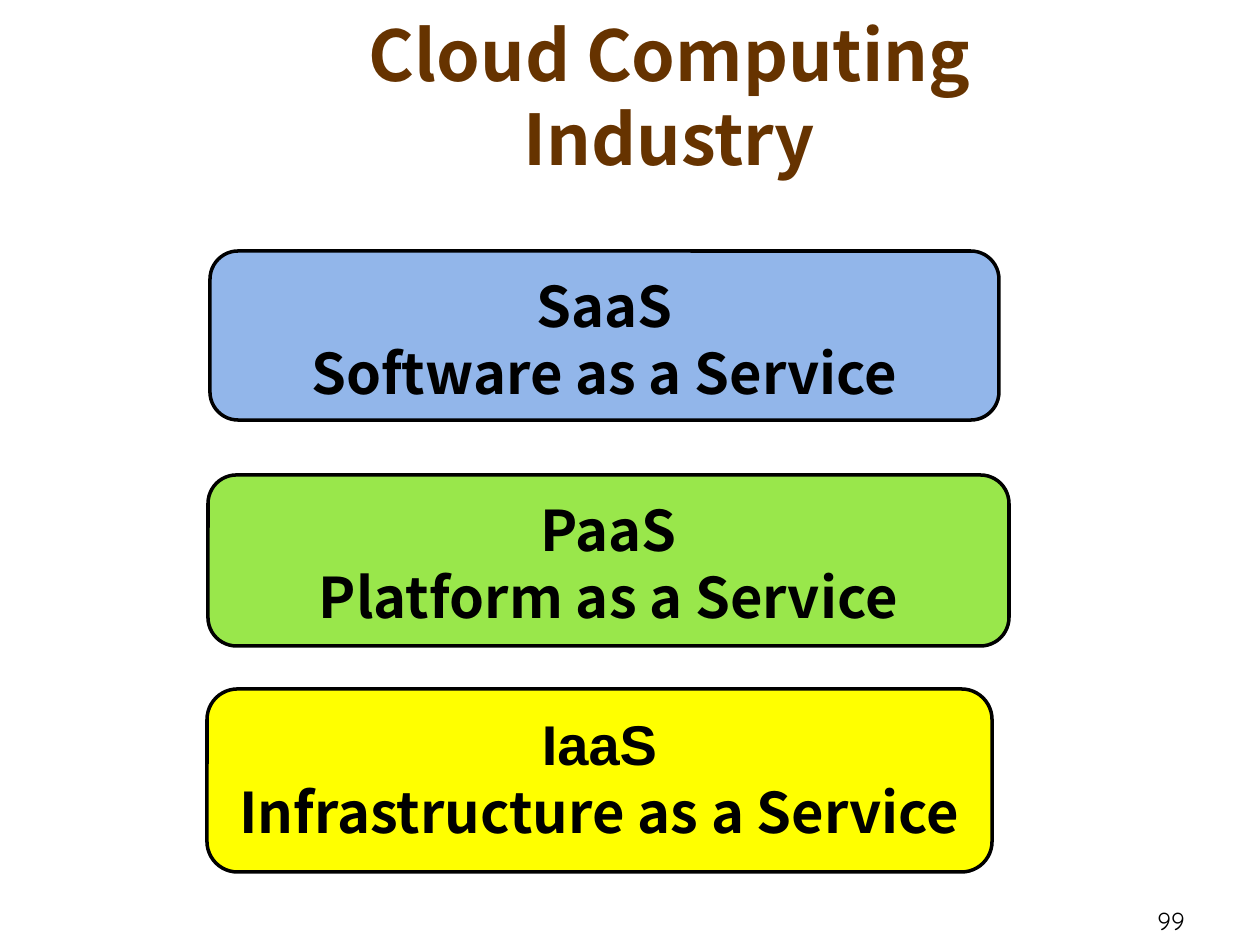
from pptx import Presentation
from pptx.dml.color import RGBColor
from pptx.enum.shapes import MSO_SHAPE as Shape
from pptx.enum.text import MSO_ANCHOR as Anchor, PP_ALIGN as Align
from pptx.util import Pt

TITLE = "Cloud Computing Industry"
PAGE = "99"
NOTO = "Noto Sans CJK SC"
LAYERS = [
    ("IaaS", "Infrastructure as a Service", "yellow", "Arial", (207, 689, 785, 183)),
    ("PaaS", "Platform as a Service", "green", NOTO, (208, 475, 801, 171)),
    ("SaaS", "Software as a Service", "blue", NOTO, (210, 251, 789, 169)),
]
THEME = {
    "colors": {"brown": "663300", "black": "000000", "yellow": "FFFF00",
               "green": "99E74B", "blue": "92B6EA"},
    "sizes": {"title": 40, "layer": 32, "page": 14},
    "leading": 1.2,
}
SCALE = 914400 / 126


def px(n):
    return round(n * SCALE)


def color(name):
    return RGBColor.from_string(THEME["colors"][name])


def style(para, role, face, tint="black", align=Align.CENTER, bold=True):
    size = THEME["sizes"][role]
    para.alignment = align
    font = para.font
    font.name, font.size, font.bold = face, Pt(size), bold
    font.color.rgb = color(tint)
    if bold:
        para.line_spacing = Pt(size * THEME["leading"])
        para.space_before = Pt(0)


def add_title(slide):
    title = slide.shapes.title
    title.left, title.top, title.width, title.height = map(px, (233, 11, 873, 158))
    frame = title.text_frame
    frame.text = TITLE
    frame.word_wrap = True
    frame.vertical_anchor = Anchor.MIDDLE
    frame.margin_top, frame.margin_bottom = px(12), 0
    style(frame.paragraphs[0], "title", NOTO, "brown")


def add_layer(slide, short, full, fill, face, box):
    card = slide.shapes.add_shape(Shape.ROUNDED_RECTANGLE, *map(px, box))
    card.shadow.inherit = False
    card.fill.solid()
    card.fill.fore_color.rgb = color(fill)
    card.line.color.rgb = color("black")
    card.line.width = Pt(2)
    frame = card.text_frame
    frame.text = f"{short}\n{full}"
    frame.vertical_anchor = Anchor.TOP
    frame.margin_top = px(12)
    for para, name in zip(frame.paragraphs, (face, NOTO)):
        style(para, "layer", name)


def add_page(slide):
    frame = slide.shapes.add_textbox(*map(px, (903, 900, 294, 28))).text_frame
    frame.word_wrap = True
    frame.text = PAGE
    style(frame.paragraphs[0], "page", "Quicksand", align=Align.RIGHT, bold=False)


def main():
    deck = Presentation()
    deck.slide_width, deck.slide_height = px(1260), px(945)
    slide = deck.slides.add_slide(deck.slide_layouts[5])
    add_title(slide)
    add_page(slide)
    for layer in LAYERS:
        add_layer(slide, *layer)
    deck.save("out.pptx")


if __name__ == "__main__":
    main()
